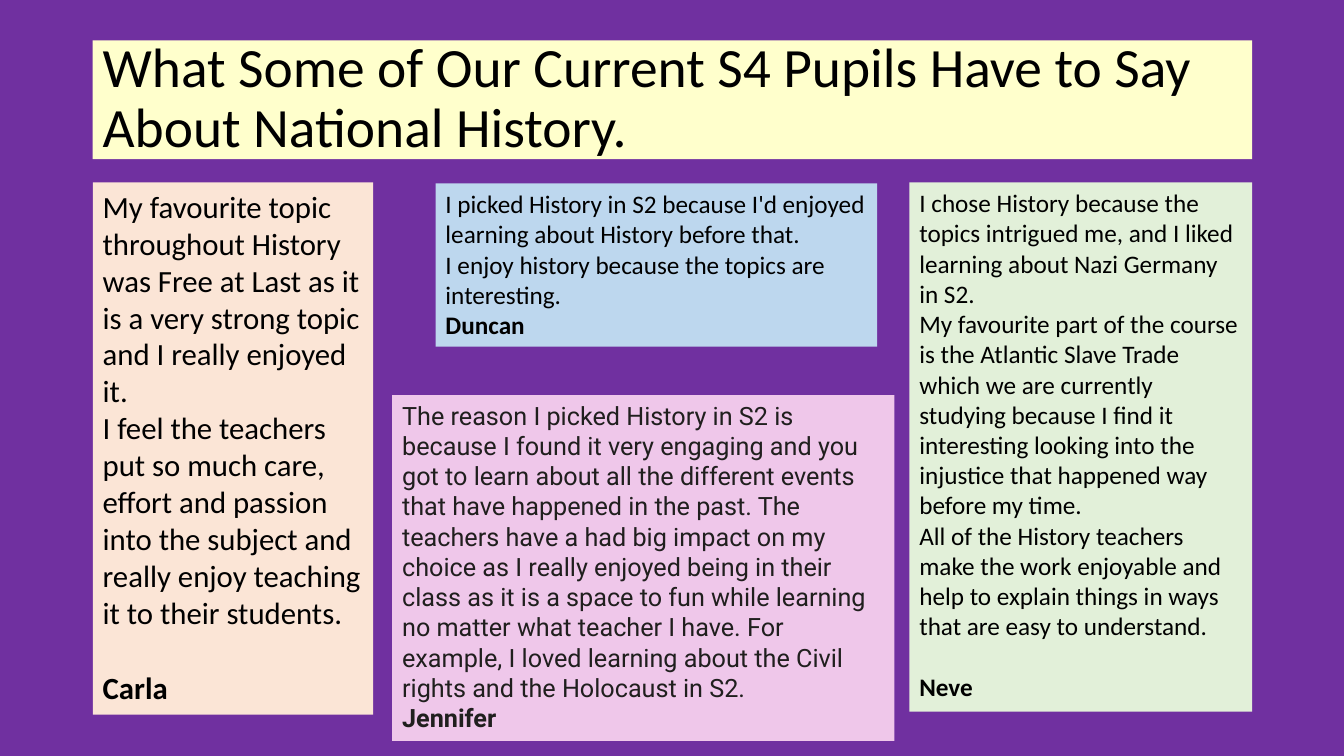
from pptx import Presentation
from pptx.dml.color import RGBColor
from pptx.enum.text import MSO_ANCHOR
from pptx.util import Inches, Pt

MIDDLE, TOP = MSO_ANCHOR.MIDDLE, MSO_ANCHOR.TOP

PURPLE = RGBColor(0x70, 0x30, 0xA0)
CREAM = RGBColor(0xFF, 0xFF, 0xCC)
PEACH = RGBColor(0xFB, 0xE5, 0xD6)
BLUE = RGBColor(0xBD, 0xD7, 0xEE)
GREEN = RGBColor(0xE2, 0xF0, 0xD9)
PINK = RGBColor(0xEF, 0xC7, 0xEA)
BLACK = RGBColor(0x00, 0x00, 0x00)
CHARCOAL = RGBColor(0x20, 0x1F, 0x1E)

LINE_HEIGHT = 1.22  # height of one Calibri line relative to its size


class PupilSlide:
    def __init__(self, presentation, background):
        self.slide = presentation.slides.add_slide(presentation.slide_layouts[6])
        fill = self.slide.background.fill
        fill.solid()
        fill.fore_color.rgb = background

    def panel(self, box, fill, paragraphs, size, font="Calibri", color=BLACK, anchor=TOP):
        """Add a filled text box and return its paragraphs."""
        shape = self.slide.shapes.add_textbox(*map(Inches, box))
        shape.fill.solid()
        shape.fill.fore_color.rgb = fill
        text_frame = shape.text_frame
        text_frame.word_wrap = True
        text_frame.vertical_anchor = anchor
        text_frame.text = "\n".join(paragraphs)
        for paragraph in text_frame.paragraphs:
            run_font = paragraph.runs[0].font
            run_font.name, run_font.size = font, Pt(size)
            run_font.color.rgb = color
        return text_frame.paragraphs

    def title(self, box, text):
        heading = self.panel(box, CREAM, [text], 39.6, anchor=MIDDLE)[0]
        heading.line_spacing = 0.9

    def quote(self, box, fill, paragraphs, pupil, size=18, name_gap=False, **style):
        """Add a pupil's comment, signed in bold, optionally one line lower."""
        signature = self.panel(box, fill, [*paragraphs, pupil], size, **style)[-1]
        signature.runs[0].font.bold = True
        if name_gap:
            signature.space_before = Pt(round(size * LINE_HEIGHT, 1))


def main():
    presentation = Presentation()
    presentation.slide_width = Inches(13.33)
    presentation.slide_height = Inches(7.5)
    page = PupilSlide(presentation, PURPLE)

    # Heading
    page.title((0.92, 0.4, 11.5, 1.18),
               "What Some of Our Current S4 Pupils Have to Say About National History.")

    # Left column
    page.quote((0.92, 1.81, 2.78, 5.28), PEACH, [
        "My favourite topic throughout History was Free at Last as it is a very "
        "strong topic and I really enjoyed it.",
        "I feel the teachers put so much care, effort and passion into the subject "
        "and really enjoy teaching it to their students.",
    ], "Carla", size=22, name_gap=True)

    # Middle column
    page.quote((4.32, 1.82, 4.38, 1.62), BLUE, [
        "I picked History in S2 because I'd enjoyed learning about History before that.",
        "I enjoy history because the topics are interesting.",
    ], "Duncan")
    page.quote((3.89, 3.92, 4.98, 3.43), PINK, [
        "The reason I picked History in S2 is because I found it very engaging and "
        "you got to learn about all the different events that have happened in the "
        "past. The teachers have a had big impact on my choice as I really enjoyed "
        "being in their class as it is a space to fun while learning no matter what "
        "teacher I have. For example, I loved learning about the Civil rights and "
        "the Holocaust in S2.",
    ], "Jennifer", font="Roboto", color=CHARCOAL)

    # Right column
    page.quote((9.02, 1.81, 3.4, 5.25), GREEN, [
        "I chose History because the topics intrigued me, and I liked learning "
        "about Nazi Germany in S2.",
        "My favourite part of the course is the Atlantic Slave Trade which we are "
        "currently studying because I find it interesting looking into the "
        "injustice that happened way before my time.",
        "All of the History teachers make the work enjoyable and help to explain "
        "things in ways that are easy to understand.",
    ], "Neve", name_gap=True)

    presentation.save("out.pptx")


if __name__ == "__main__":
    main()
